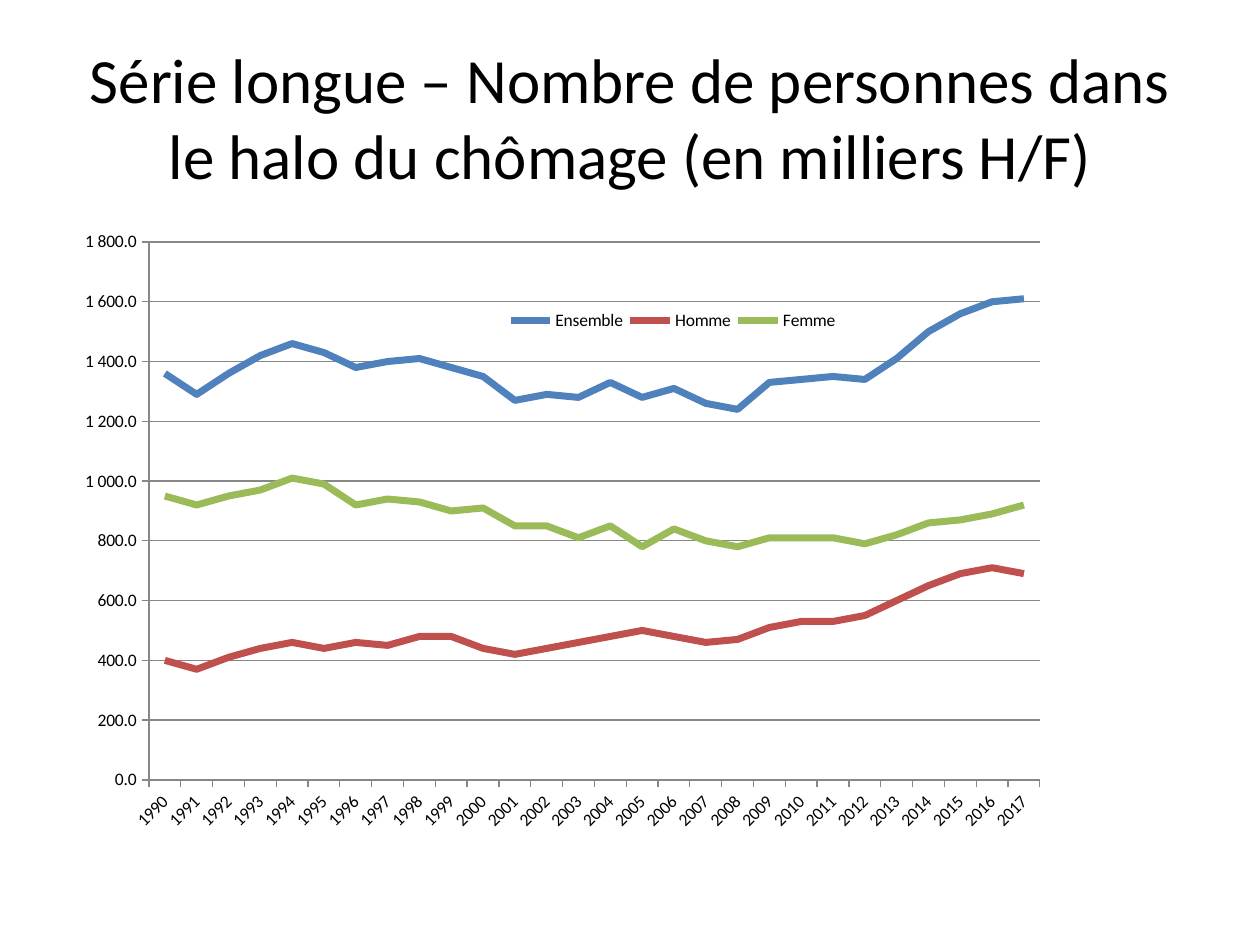
from dataclasses import dataclass

from pptx import Presentation
from pptx.chart.data import CategoryChartData
from pptx.dml.color import RGBColor
from pptx.enum.chart import XL_CHART_TYPE as ChartType
from pptx.enum.chart import XL_LEGEND_POSITION as LegendPosition
from pptx.enum.chart import XL_MARKER_STYLE as MarkerStyle
from pptx.enum.chart import XL_TICK_MARK as TickMark
from pptx.enum.text import MSO_ANCHOR as Anchor
from pptx.enum.text import MSO_AUTO_SIZE as AutoSize
from pptx.enum.text import PP_ALIGN as Align
from pptx.oxml import parse_xml
from pptx.oxml.ns import nsdecls
from pptx.util import Pt

EMU_PER_PX = 914400 / 126
FONT = "Calibri"
BLACK = "000000"
AXIS_GREY = "878787"


@dataclass(frozen=True)
class Box:
    left: int
    top: int
    width: int
    height: int

    def emu(self) -> tuple[int, ...]:
        return tuple(px(n) for n in (self.left, self.top, self.width, self.height))


@dataclass(frozen=True)
class Trend:
    name: str
    color: str
    thousands: tuple[int, ...]


SLIDE = Box(0, 0, 1260, 945)
TITLE = Box(63, 38, 1134, 157)
CHART = Box(63, 220, 1134, 624)
PLOT = Box(149, 242, 891, 538)
LEGEND = Box(503, 307, 340, 28)

YEARS = [str(year) for year in range(1990, 2018)]
TRENDS = (
    Trend("Ensemble", "4F81BD", (
        1360, 1290, 1360, 1420, 1460, 1430, 1380, 1400, 1410, 1380, 1350, 1270, 1290, 1280,
        1330, 1280, 1310, 1260, 1240, 1330, 1340, 1350, 1340, 1410, 1500, 1560, 1600, 1610)),
    Trend("Homme", "C0504D", (
        400, 370, 410, 440, 460, 440, 460, 450, 480, 480, 440, 420, 440, 460,
        480, 500, 480, 460, 470, 510, 530, 530, 550, 600, 650, 690, 710, 690)),
    Trend("Femme", "9BBB59", (
        950, 920, 950, 970, 1010, 990, 920, 940, 930, 900, 910, 850, 850, 810,
        850, 780, 840, 800, 780, 810, 810, 810, 790, 820, 860, 870, 890, 920)),
)


def px(length: int) -> int:
    return round(length * EMU_PER_PX)


def rgb(color: str) -> RGBColor:
    return RGBColor.from_string(color)


def style_font(font, size: int) -> None:
    font.name, font.size = FONT, Pt(size)
    font.color.rgb = rgb(BLACK)


def style_line(line, color: str, width: float) -> None:
    line.color.rgb = rgb(color)
    line.width = Pt(width)


def layout(box: Box, inner: bool = False):
    """Manual chart layout, as fractions of the chart frame."""
    target = '<c:layoutTarget val="inner"/>' if inner else ""
    fractions = {
        "x": (box.left - CHART.left) / CHART.width,
        "y": (box.top - CHART.top) / CHART.height,
        "w": box.width / CHART.width,
        "h": box.height / CHART.height,
    }
    values = "".join(f'<c:{key} val="{value:.4f}"/>' for key, value in fractions.items())
    return parse_xml(
        f'<c:layout {nsdecls("c")}><c:manualLayout>{target}'
        f'<c:xMode val="edge"/><c:yMode val="edge"/>{values}</c:manualLayout></c:layout>')


def add_title(slide, text: str) -> None:
    title = slide.shapes.title
    title.left, title.top, title.width, title.height = TITLE.emu()
    frame = title.text_frame
    frame.word_wrap = True
    frame.auto_size = AutoSize.NONE
    frame.vertical_anchor = Anchor.MIDDLE
    paragraph = frame.paragraphs[0]
    paragraph.alignment = Align.CENTER
    run = paragraph.add_run()
    run.text = text
    style_font(run.font, 36)


def style_axes(chart) -> None:
    years, thousands = chart.category_axis, chart.value_axis
    for axis in (years, thousands):
        axis.major_tick_mark = TickMark.OUTSIDE
        axis.minor_tick_mark = TickMark.NONE
        style_line(axis.format.line, AXIS_GREY, 0.75)
        style_font(axis.tick_labels.font, 10)

    # Slanted year labels
    years.has_major_gridlines = False
    years._element.txPr.bodyPr.set("rot", "-2700000")

    thousands.minimum_scale, thousands.maximum_scale = 0, 1800
    thousands.major_unit = 200
    thousands.has_major_gridlines = True
    style_line(thousands.major_gridlines.format.line, AXIS_GREY, 0.75)
    thousands.tick_labels.number_format = "#\\ ##0.0"
    thousands.tick_labels.number_format_is_linked = False


def place_plot(chart) -> None:
    plot_area = chart._chartSpace.chart.plotArea
    for automatic in plot_area.findall("{*}layout"):
        plot_area.remove(automatic)
    plot_area.insert(0, layout(PLOT, inner=True))


def add_legend(chart) -> None:
    chart.has_legend = True
    legend = chart.legend
    legend.position = LegendPosition.RIGHT
    legend.include_in_layout = False
    style_font(legend.font, 10)
    element = legend._element
    for automatic in element.findall("{*}layout"):
        element.remove(automatic)
    element.find("{*}legendPos").addnext(layout(LEGEND))


def add_trends(slide, trends: tuple[Trend, ...]) -> None:
    data = CategoryChartData()
    data.categories = YEARS
    for trend in trends:
        data.add_series(trend.name, trend.thousands)
    chart = slide.shapes.add_chart(ChartType.LINE, *CHART.emu(), data).chart
    chart.has_title = False
    style_font(chart.font, 10)
    chart.plots[0].vary_by_categories = False
    for series, trend in zip(chart.plots[0].series, trends):
        series.smooth = False
        series.marker.style = MarkerStyle.NONE
        style_line(series.format.line, trend.color, 4)
    style_axes(chart)
    place_plot(chart)
    add_legend(chart)


def main() -> None:
    deck = Presentation()
    deck.slide_width, deck.slide_height = px(SLIDE.width), px(SLIDE.height)
    slide = deck.slides.add_slide(deck.slide_layouts[5])  # title only
    add_title(slide, "Série longue – Nombre de personnes dans le halo du chômage (en milliers H/F)")
    add_trends(slide, TRENDS)
    deck.save("out.pptx")


if __name__ == "__main__":
    main()
